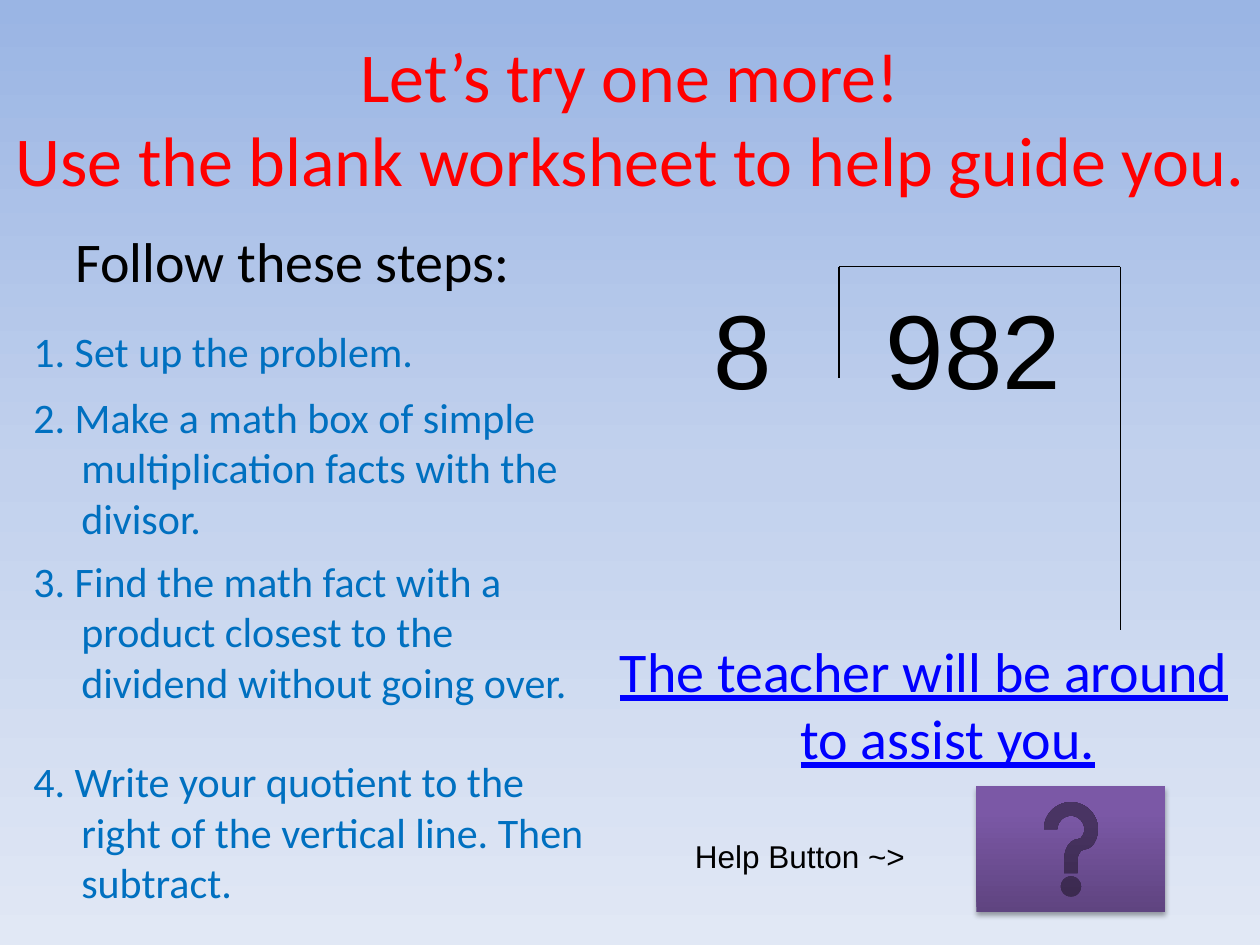
"""Build the long-division practice slide with steps, worked problem and help button."""
from copy import deepcopy

from lxml import etree
from pptx import Presentation
from pptx import util as u
from pptx.dml.color import RGBColor
from pptx.enum import shapes, text
from pptx.oxml import parse_xml
from pptx.oxml.ns import nsdecls, qn

COLORS = {"title": "FF0000", "ink": "000000", "step": "0070C0", "link": "0000FF"}
SKY = [(0, "9AB5E4"), (0.5, "C2D1ED"), (1, "E1E8F5")]
PURPLE = [(0, "5F4480"), (0.8, "7B58A6"), (1, "7C57A8")]

deck = Presentation()
deck.slide_width, deck.slide_height = u.Inches(10), u.Inches(7.5)
COL, ROW = deck.slide_width / 120, deck.slide_height / 90
page = deck.slides.add_slide(deck.slide_layouts[5])


def paint(fill, stops, angle):
    fill.gradient()
    fill.gradient_angle = angle
    first = fill.gradient_stops[0]._gs
    first.addnext(deepcopy(first))
    for stop, (position, color) in zip(fill.gradient_stops, stops):
        stop.position = position
        stop.color.rgb = RGBColor.from_string(color)


def write(words, left, top, width, height, box=None, size=24, font="Calibri",
          color="ink", align=None, hanging=False, underline=None):
    place = [int(left * COL), int(top * ROW), int(width * COL), int(height * ROW)]
    box = box or page.shapes.add_textbox(*place)
    box.left, box.top, box.width, box.height = place
    frame = box.text_frame
    frame.word_wrap = True
    frame.auto_size = text.MSO_AUTO_SIZE.NONE
    para = frame.paragraphs[0]
    para.text = words
    para.alignment = align
    if hanging:
        para.space_before = u.Pt(0.2 * size)
        indent = u.Inches(0.38)
        para._p.get_or_add_pPr().set("marL", str(indent))
        para._p.get_or_add_pPr().set("indent", str(-indent))
    for span in para.runs:
        span.font.size = u.Pt(size)
        span.font.name = font
        span.font.underline = underline
        span.font.color.rgb = RGBColor.from_string(COLORS[color])
    return box


paint(page.background.fill, SKY, 270)
center = text.PP_ALIGN.CENTER
title = write("Let’s try one more!\vUse the blank worksheet to help guide you. ",
              0, 3.6, 120, 15, box=page.shapes.title, size=40, color="title", align=center)
title.text_frame.vertical_anchor = text.MSO_ANCHOR.MIDDLE

write("Follow these steps:", 6, 21, 47, 59.4, size=32, hanging=True)
write("The teacher will be around to assist you.", 56, 60, 64, 10, size=32,
      color="link", align=center, hanging=True, underline=True)

button = page.shapes.add_shape(shapes.MSO_SHAPE.ACTION_BUTTON_HELP, int(93 * COL),
                               int(74.9 * ROW), int(18 * COL), int(12 * ROW))
paint(button.fill, PURPLE, 90)
button.line.fill.background()
button.shadow.inherit = False
button._element.spPr.find(qn("a:effectLst")).append(parse_xml(
    f'<a:outerShdw {nsdecls("a")} blurRad="{u.Pt(3.1)}" dist="{u.Pt(1.8)}" dir="5400000" '
    'rotWithShape="0"><a:srgbClr val="000000"><a:alpha val="35000"/></a:srgbClr></a:outerShdw>'))
write("Help Button ~>", 65, 79.1, 33, 4.8, size=18, font="Arial")

steps = [
    ("1. Set up the problem.", 30.4, 63, 6.4),
    ("2. Make a math box of simple multiplication facts with the divisor.", 36.7, 63, 18.4),
    ("3. Find the math fact with a product closest to the dividend without going over.",
     52.3, 56.5, 22),
    ("4. Write your quotient to the right of the vertical line. Then subtract.",
     71.4, 56, 15.2),
]
for words, top, width, height in steps:
    write(words, 2, top, width, height, color="step", hanging=True)

bracket = [(79.9, 36), (79.9, 25.4), (106.7, 25.4), (106.7, 60)]
for (x1, y1), (x2, y2) in zip(bracket, bracket[1:]):
    edge = page.shapes.add_connector(shapes.MSO_CONNECTOR.STRAIGHT, int(x1 * COL),
                                     int(y1 * ROW), int(x2 * COL), int(y2 * ROW))
    edge.line.width = u.Pt(0.75)
    edge.line.color.rgb = RGBColor.from_string(COLORS["ink"])
    etree.SubElement(edge._element.spPr, qn("a:effectLst"))
for digits, left, width in [("982", 83.2, 27.8), ("8", 66.8, 11)]:
    write(digits, left, 26.5, width, 13.3, size=60, font="Arial")

deck.save("out.pptx")
